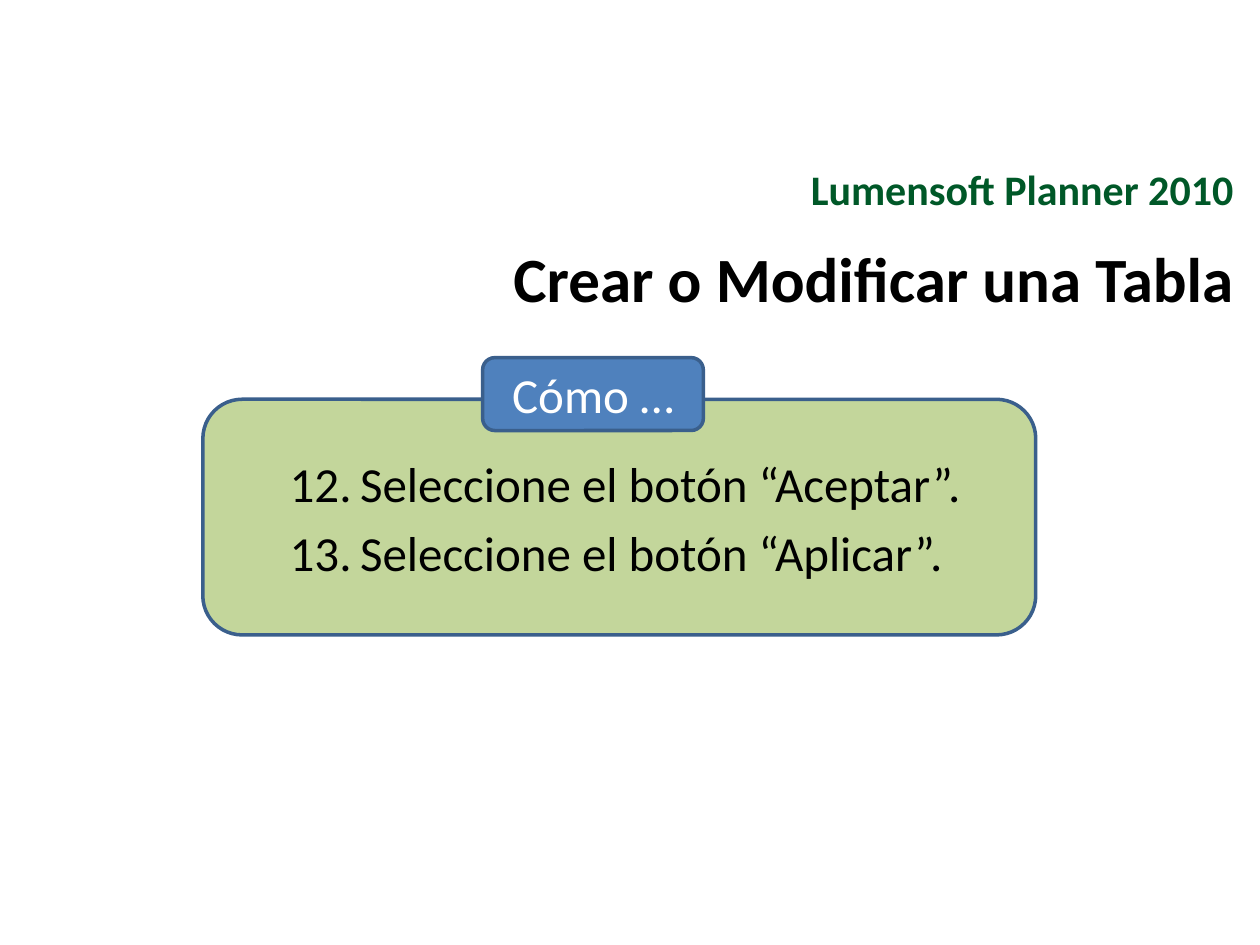
"""Build a slide with the closing steps for creating or modifying a table."""
from lxml import etree
from pptx import Presentation, util as u
from pptx.dml.color import RGBColor
from pptx.enum import shapes, text
from pptx.oxml.ns import qn

COLOURS = {"green": "005828", "black": "000000", "white": "FFFFFF",
           "panel": "C3D69B", "label": "4F81BD", "outline": "3A5F8C"}
FONT = "Calibri"
FIRST_STEP = 12
RIGHT, CENTER, JUSTIFY = (text.PP_ALIGN.RIGHT, text.PP_ALIGN.CENTER,
                          text.PP_ALIGN.JUSTIFY)
TOP, MIDDLE = text.MSO_ANCHOR.TOP, text.MSO_ANCHOR.MIDDLE

HEADINGS = [
    {"lines": ["Lumensoft Planner 2010"], "at": (13.69, 2.92, 11.43, 1.75),
     "size": 24, "colour": "green", "anchor": MIDDLE},
    {"lines": ["Crear o Modificar una Tabla"], "at": (9.22, 4.7, 15.9, 1.8),
     "size": 36, "colour": "black", "anchor": TOP},
]
STEPS = {"lines": ["Seleccione el botón “Aceptar”.", "Seleccione el botón “Aplicar”."],
         "at": (4.09, 8.05, 16.79, 4.75), "fill": "panel", "colour": "black",
         "align": JUSTIFY}
LABEL = {"lines": ["Cómo …"], "at": (9.73, 7.21, 4.45, 1.47), "fill": "label",
         "colour": "white", "align": CENTER}


def rgb(name):
    return RGBColor.from_string(COLOURS[name])


def write(box, lines, size, colour, align, anchor=MIDDLE, bold=False):
    frame = box.text_frame
    frame.word_wrap = True
    frame.vertical_anchor = anchor
    frame.text = "\n".join(lines)
    for para in frame.paragraphs:
        para.alignment = align
        for span in para.runs:
            span.font.name = FONT
            span.font.size = u.Pt(size)
            span.font.bold = bold
            span.font.color.rgb = rgb(colour)


def add_heading(page, heading):
    box = page.shapes.add_textbox(*map(u.Cm, heading["at"]))
    write(box, heading["lines"], heading["size"], heading["colour"], RIGHT,
          heading["anchor"], bold=True)


def add_panel(page, panel):
    box = page.shapes.add_shape(shapes.MSO_SHAPE.ROUNDED_RECTANGLE,
                                *map(u.Cm, panel["at"]))
    box.shadow.inherit = False
    box.fill.solid()
    box.fill.fore_color.rgb = rgb(panel["fill"])
    box.line.color.rgb = rgb("outline")
    box.line.width = u.Pt(2)
    write(box, panel["lines"], 28, panel["colour"], panel["align"])
    return box


def number_steps(box):
    paras = box.text_frame.paragraphs
    for para in paras:
        para.level = 1
        props = para._p.get_or_add_pPr()
        props.set("marL", str(u.Cm(2.69)))
        props.set("indent", str(-u.Cm(1.42)))
        etree.SubElement(props, qn("a:buFont"), typeface="+mj-lt")
        etree.SubElement(props, qn("a:buAutoNum"), type="arabicPeriod",
                         startAt=str(FIRST_STEP))
    paras[0].space_after = u.Pt(6)


def main():
    deck = Presentation()
    deck.slide_width, deck.slide_height = u.Cm(25.4), u.Cm(19.05)
    page = deck.slides.add_slide(deck.slide_layouts[6])
    for heading in HEADINGS:
        add_heading(page, heading)
    number_steps(add_panel(page, STEPS))
    add_panel(page, LABEL)
    deck.save("out.pptx")


if __name__ == "__main__":
    main()
